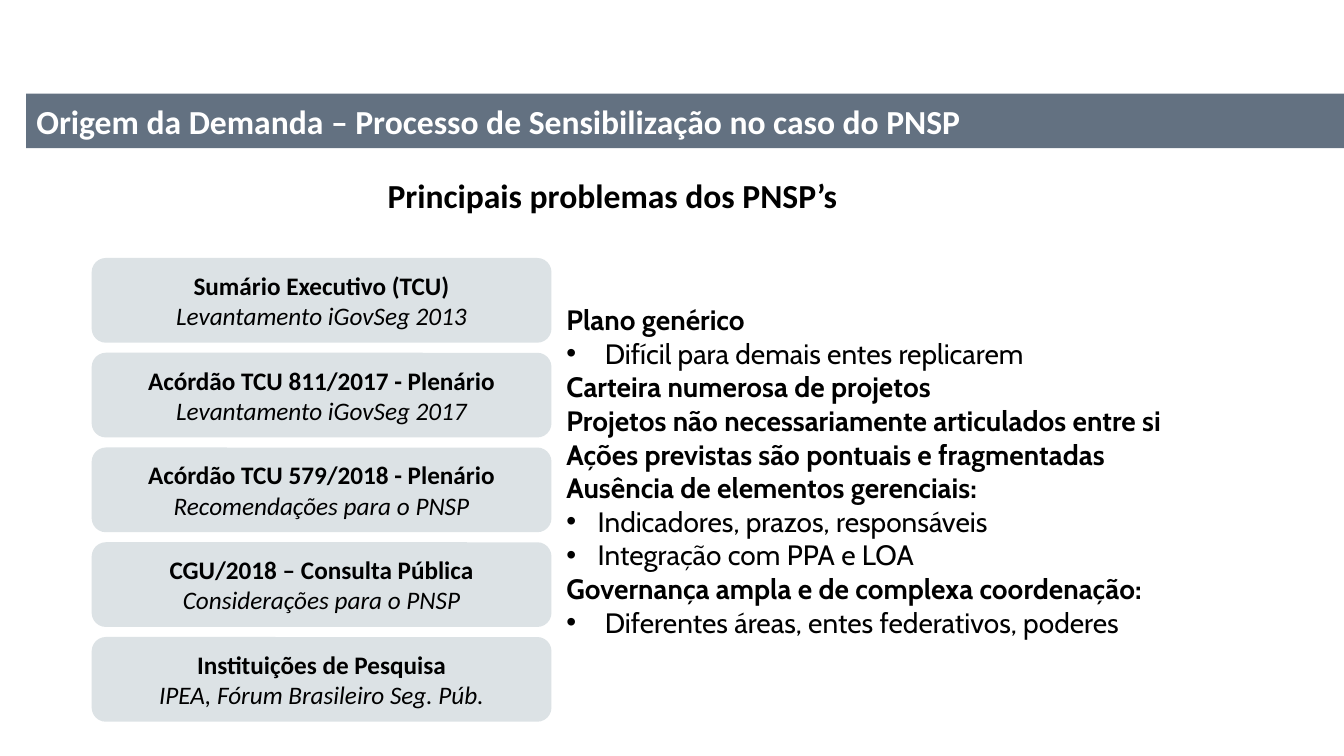
from lxml.etree import SubElement
from pptx import Presentation
from pptx.dml.color import RGBColor
from pptx.enum.shapes import MSO_SHAPE
from pptx.enum.text import MSO_ANCHOR, MSO_AUTO_SIZE, PP_ALIGN
from pptx.oxml.ns import qn
from pptx.util import Inches, Pt

COLORS = {"bar": "637181", "card": "DCE2E5", "white": "FFFFFF", "text": "000000"}

SOURCES = [
    ("Sumário Executivo (TCU)", "Levantamento iGovSeg 2013"),
    ("Acórdão TCU 811/2017 - Plenário", "Levantamento iGovSeg 2017"),
    ("Acórdão TCU 579/2018 - Plenário", "Recomendações para o PNSP"),
    ("CGU/2018 – Consulta Pública", "Considerações para o PNSP"),
    ("Instituições de Pesquisa", "IPEA, Fórum Brasileiro Seg. Púb."),
]
CARD_TOP, CARD_STEP = 2.56, 0.94

# Each problem has a bullet indent in inches; zero marks a bold heading.
PROBLEMS = [
    ("Plano genérico", 0),
    ("Difícil para demais entes replicarem", 0.38),
    ("Carteira numerosa de projetos", 0),
    ("Projetos não necessariamente articulados entre si", 0),
    ("Ações previstas são pontuais e fragmentadas", 0),
    ("Ausência de elementos gerenciais:", 0),
    ("Indicadores, prazos, responsáveis", 0.31),
    ("Integração com PPA e LOA", 0.31),
    ("Governança ampla e de complexa coordenação:", 0),
    ("Diferentes áreas, entes federativos, poderes", 0.38),
]


def fill_shape(shape, color):
    shape.fill.solid()
    shape.fill.fore_color.rgb = RGBColor.from_string(COLORS[color])


def place(shape, left, top, width, height):
    shape.left, shape.top = Inches(left), Inches(top)
    shape.width, shape.height = Inches(width), Inches(height)


def add_box(slide, kind, left, top, width, height, color):
    shape = slide.shapes.add_shape(
        kind, Inches(left), Inches(top), Inches(width), Inches(height))
    shape.shadow.inherit = False
    shape.line.fill.background()
    fill_shape(shape, color)
    shape.text_frame.vertical_anchor = MSO_ANCHOR.MIDDLE
    return shape


def format_paragraph(paragraph, size, alignment=PP_ALIGN.LEFT, font="Calibri",
                     color="text", bold=True, italic=False):
    paragraph.alignment = alignment
    paragraph.font.name = font
    paragraph.font.size = Pt(size)
    paragraph.font.bold = bold
    paragraph.font.italic = italic
    paragraph.font.color.rgb = RGBColor.from_string(COLORS[color])


def add_bullet(paragraph, indent):
    properties = paragraph._p.get_or_add_pPr()
    properties.set("marL", str(Inches(indent)))
    properties.set("indent", str(-Inches(indent)))
    SubElement(properties, qn("a:buFont"), typeface="Arial")
    SubElement(properties, qn("a:buChar"), char="•")


def set_title(slide, text):
    title = slide.shapes.title
    place(title, 0.26, 0.93, 13.08, 0.54)
    fill_shape(title, "bar")
    frame = title.text_frame
    frame.text = text
    frame.auto_size = MSO_AUTO_SIZE.NONE
    frame.vertical_anchor = MSO_ANCHOR.MIDDLE
    format_paragraph(frame.paragraphs[0], 24, color="white")


def add_subtitle(slide, text):
    box = slide.shapes.add_textbox(
        Inches(2.7), Inches(1.69), Inches(6.75), Inches(0.5))
    frame = box.text_frame
    frame.word_wrap = True
    frame.text = text
    format_paragraph(frame.paragraphs[0], 24, PP_ALIGN.CENTER)


def add_source_card(slide, top, name, detail):
    card = add_box(slide, MSO_SHAPE.ROUNDED_RECTANGLE, 0.91, top, 4.56, 0.84, "card")
    frame = card.text_frame
    frame.text = f"{name}\n{detail}"
    heading, description = frame.paragraphs
    format_paragraph(heading, 18, PP_ALIGN.CENTER)
    format_paragraph(description, 18, PP_ALIGN.CENTER, bold=False, italic=True)


def add_problem_list(slide):
    box = add_box(slide, MSO_SHAPE.RECTANGLE, 5.52, 2.22, 7.87, 4.9, "white")
    frame = box.text_frame
    frame.text = "\n".join(text for text, _ in PROBLEMS)
    for paragraph, (_, indent) in zip(frame.paragraphs, PROBLEMS):
        if indent:
            add_bullet(paragraph, indent)
        format_paragraph(paragraph, 20, font="Cabin", bold=not indent)


def main():
    presentation = Presentation()
    presentation.slide_width = Inches(13.33)
    presentation.slide_height = Inches(7.5)
    slide = presentation.slides.add_slide(presentation.slide_layouts[5])
    set_title(slide, "Origem da Demanda – Processo de Sensibilização no caso do PNSP")
    add_subtitle(slide, "Principais problemas dos PNSP’s")
    for index, (name, detail) in enumerate(SOURCES):
        add_source_card(slide, CARD_TOP + index * CARD_STEP, name, detail)
    add_problem_list(slide)
    presentation.save("out.pptx")


if __name__ == "__main__":
    main()
